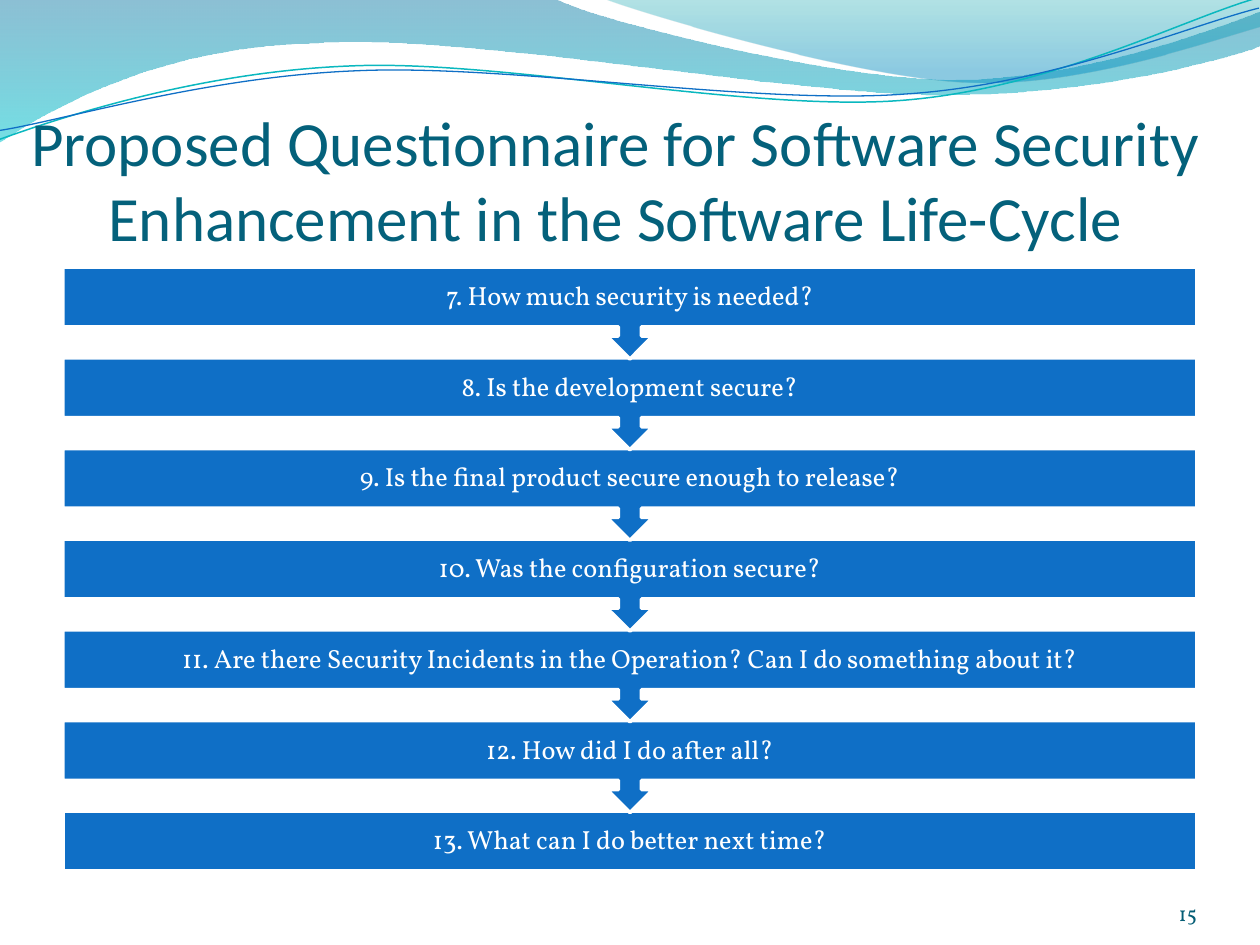
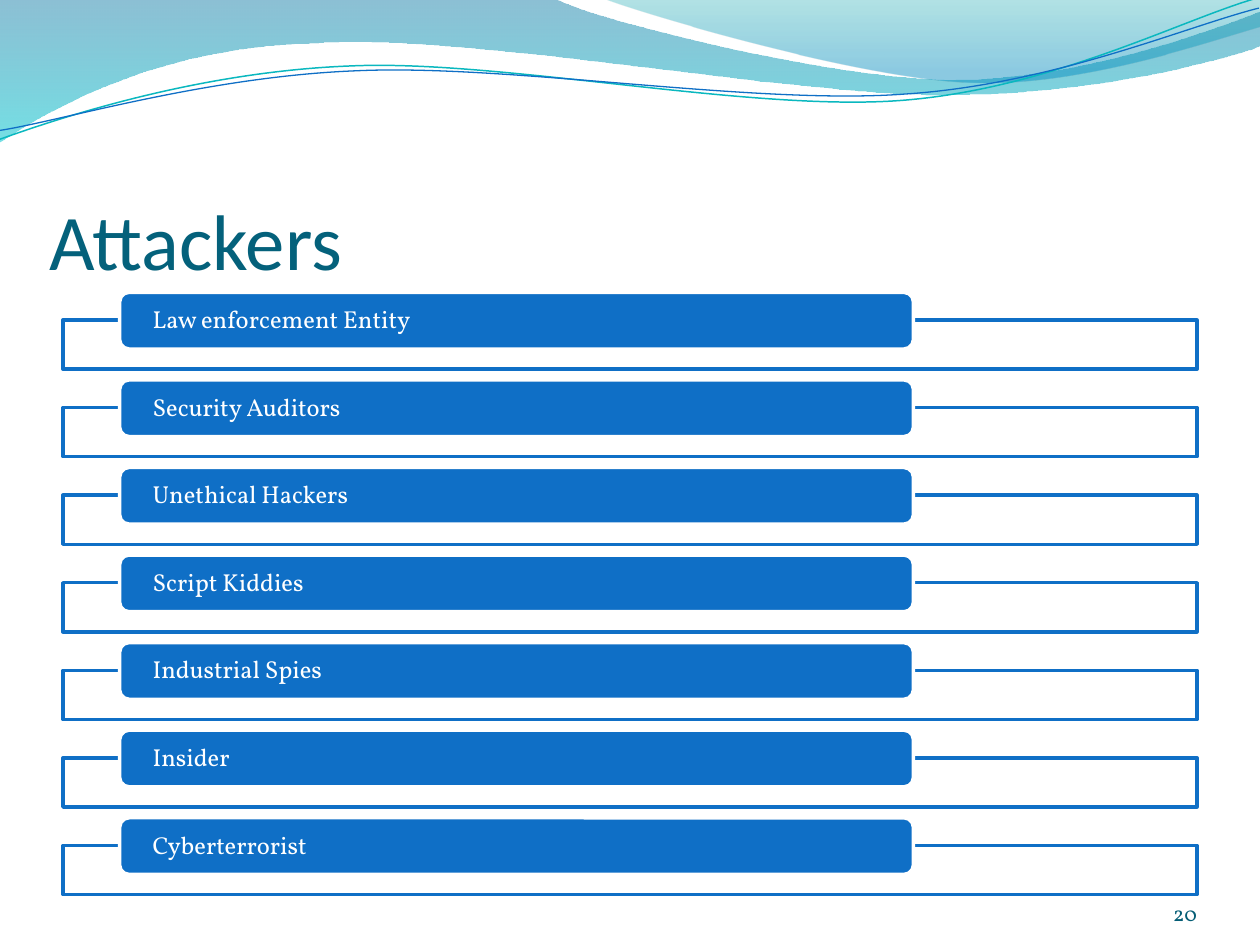
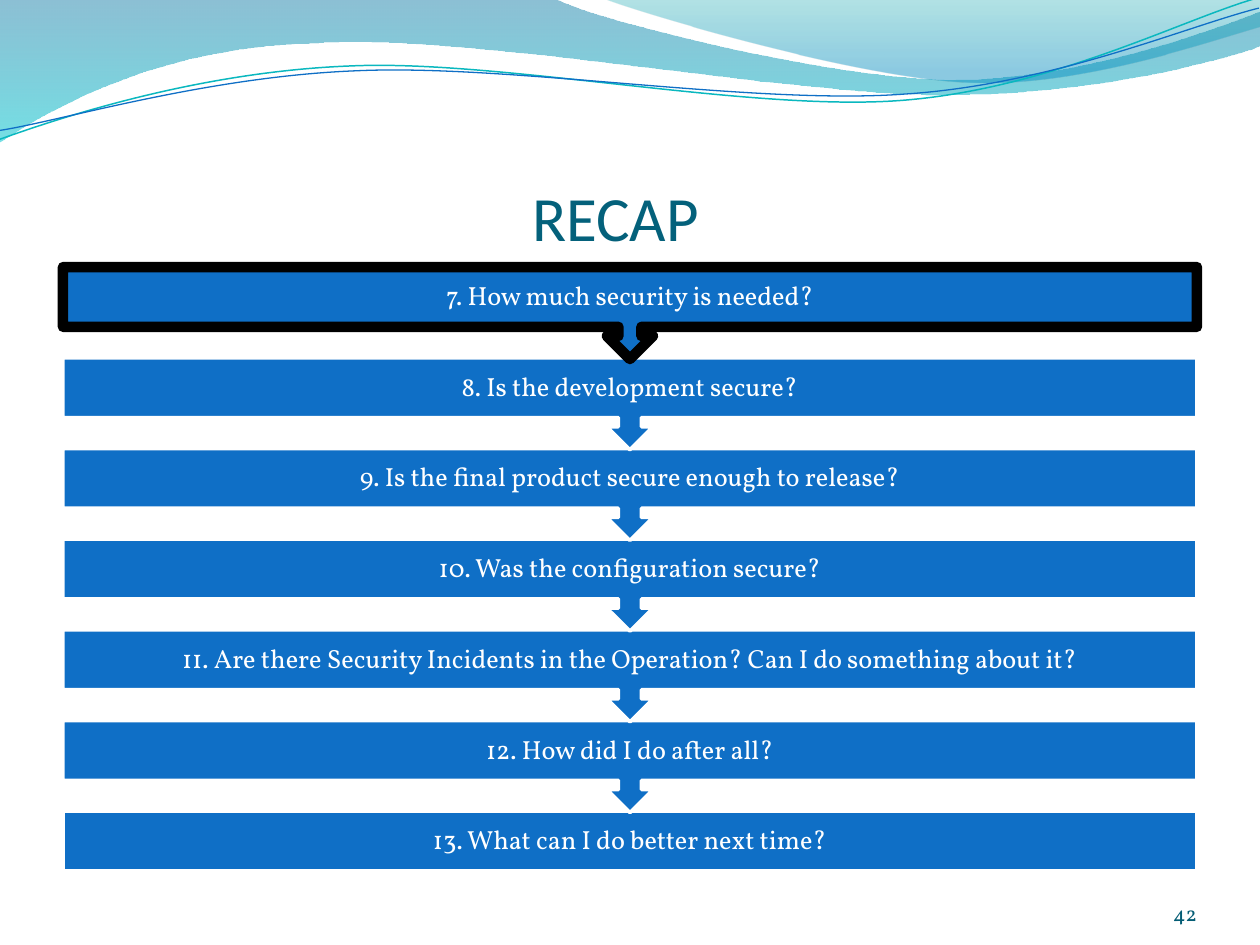
from dataclasses import dataclass

from lxml import etree
from pptx import Presentation
from pptx.dml.color import RGBColor
from pptx.enum.shapes import MSO_SHAPE
from pptx.enum.text import MSO_ANCHOR, MSO_AUTO_SIZE, PP_ALIGN
from pptx.oxml.ns import qn
from pptx.util import Inches, Pt

RECTANGLE = MSO_SHAPE.RECTANGLE
ROUNDED = MSO_SHAPE.ROUNDED_RECTANGLE
ARROW_BOX = MSO_SHAPE.DOWN_ARROW_CALLOUT
LEFT, CENTER, RIGHT = PP_ALIGN.LEFT, PP_ALIGN.CENTER, PP_ALIGN.RIGHT
MIDDLE, BOTTOM = MSO_ANCHOR.MIDDLE, MSO_ANCHOR.BOTTOM
NO_AUTOFIT = MSO_AUTO_SIZE.NONE


@dataclass(frozen=True)
class Theme:
    blue: RGBColor = RGBColor.from_string("0F6FC6")
    white: RGBColor = RGBColor.from_string("FFFFFF")
    black: RGBColor = RGBColor.from_string("000000")
    teal: RGBColor = RGBColor.from_string("0AB8BF")
    title: RGBColor = RGBColor.from_string("04617B")
    number: RGBColor = RGBColor.from_string("045D75")
    heading_font: str = "Calibri"
    body_font: str = "Vollkorn"
    title_size: int = 36
    large_title_size: int = 45
    step_size: int = 15
    label_size: int = 14
    number_size: int = 12
    border: int = 2
    highlight_border: int = 6


THEME = Theme()

# Wave outlines: one point is a straight line, three points are a Bezier curve
WAVE_BANDS = [
    ([[(0, 0)], [(4.4, -0.01)],
      [(4.76, 0.17), (6.64, 0.63), (7.58, 0.63)],
      [(8.53, 0.63), (9.58, 0.26), (10, 0.09)], [(10.01, 0.36)],
      [(9.83, 0.44), (8.7, 0.76), (7.46, 0.75)],
      [(6.22, 0.75), (3.82, 0.28), (2.57, 0.34)],
      [(1.29, 0.36), (0.46, 0.83), (-0.01, 1.13)]],
     [(0, "0074A1", 45), (1, "00C6CF", 55)]),
    ([[(4.79, -0.01)],
      [(5.09, 0.11), (6.82, 0.62), (7.69, 0.65)],
      [(8.56, 0.69), (9.61, 0.32), (10, 0.21)], [(10, 0)]],
     [(0, "00A1A9", 30), (0.8, "008BBF", 45)]),
]
# The lines are given level and then turned
WAVE_LINES = [
    ([[(-0.02, 0.87)],
      [(0.47, 0.72), (1.58, 0.41), (2.78, 0.42)],
      [(3.96, 0.42), (5.91, 0.93), (7.12, 0.9)],
      [(8.32, 0.87), (9.4, 0.36), (10, 0.22)]], THEME.teal, 0.85),
    ([[(-0.02, 0.8)],
      [(0.46, 0.75), (1.64, 0.45), (2.83, 0.46)],
      [(4.03, 0.46), (5.96, 0.88), (7.16, 0.85)],
      [(8.35, 0.83), (9.42, 0.42), (10.01, 0.3)]], THEME.blue, 0.75),
]
WAVE_LINE_TURN = 357.3

QUESTIONS = [
    "7. How much security is needed?",
    "8. Is the development secure?",
    "9. Is the final product secure enough to release?",
    "10. Was the configuration secure?",
    "11. Are there Security Incidents in the Operation? Can I do something about it?",
    "12. How did I do after all?",
    "13. What can I do better next time?",
]
ATTACKERS = [
    "Law enforcement Entity", "Security Auditors", "Unethical Hackers",
    "Script Kiddies", "Industrial Spies", "Insider", "Cyberterrorist",
]
QUESTION_TITLE = ("Proposed Questionnaire for Software Security "
                  "Enhancement in the Software Life-Cycle")
CENTERED_TITLE = (0, 0.77, 9.77, 1.25)
LEFT_TITLE = (0.39, 1.33, 9, 0.94)
# Title, title box, alignment, title size, slide number, highlighted question
SLIDES = [
    (QUESTION_TITLE, CENTERED_TITLE, CENTER, THEME.title_size, "15", None),
    ("Attackers", LEFT_TITLE, LEFT, THEME.large_title_size, "20", None),
    ("RECAP", CENTERED_TITLE, CENTER, THEME.title_size, "42", 0),
]
QUESTION_TOP, QUESTION_PITCH = 2.12, 0.72
LABEL_TOP, FRAME_OFFSET = 2.32, 0.22
LABEL_PITCH = (6.49 - LABEL_TOP) / (len(ATTACKERS) - 1)


def write(shape, text, size, color, align, anchor, font=THEME.body_font,
          insets=(0, 0, 0, 0)):
    """Set one formatted paragraph; insets run left, top, right, bottom."""
    frame = shape.text_frame
    frame.text = text
    frame.word_wrap = True
    frame.auto_size = NO_AUTOFIT
    frame.vertical_anchor = anchor
    (frame.margin_left, frame.margin_top,
     frame.margin_right, frame.margin_bottom) = map(Inches, insets)
    para = frame.paragraphs[0]
    para.alignment = align
    span = para.runs[0]
    span.font.size = Pt(size)
    span.font.name = font
    span.font.color.rgb = color
    return para


def draw(shapes, kind, box, fill, line=None, width=THEME.border, outline=None):
    """Add a preset shape, or a freeform along the outline when kind is None."""
    if kind is None:
        points = [(Inches(x), Inches(y)) for part in outline for x, y in part]
        builder = shapes.build_freeform(*points[0])
        builder.add_line_segments(points[1:], close=line is None)
        shape = builder.convert_to_shape()
        corners = iter(list(shape.element.iter(qn("a:lnTo"))))
        for part in outline[1:]:
            nodes = [next(corners) for _ in part]
            if len(part) == 3:
                curve = etree.Element(qn("a:cubicBezTo"))
                nodes[0].addprevious(curve)
                for node in nodes:
                    curve.append(node[0])
                    node.getparent().remove(node)
    else:
        shape = shapes.add_shape(kind, *map(Inches, box))
    shape.shadow.inherit = False
    if fill is None:
        shape.fill.background()
    else:
        shape.fill.solid()
        shape.fill.fore_color.rgb = fill
    if line is None:
        shape.line.fill.background()
    else:
        shape.line.color.rgb = line
        shape.line.width = Pt(width)
    return shape


deck = Presentation()
deck.slide_width, deck.slide_height = Inches(10), Inches(7.5)
title_only = deck.slide_layouts[5]
pages = [deck.slides.add_slide(title_only) for _ in SLIDES]

# Freeforms can only be built on a page, so the waves then move to the master
waves = []
for outline, stops in WAVE_BANDS:
    band = draw(pages[0].shapes, None, None, None, outline=outline)
    band.fill.gradient()
    band.fill.gradient_angle = 270
    for stop, (position, color, _) in zip(band.fill.gradient_stops, stops):
        stop.position = position
        stop.color.rgb = RGBColor.from_string(color)
    for node, (_, _, opacity) in zip(band.element.iter(qn("a:srgbClr")), stops):
        etree.SubElement(node, qn("a:alpha"), val=str(opacity * 1000))
    waves.append(band)
for outline, color, width in WAVE_LINES:
    wave_line = draw(pages[0].shapes, None, None, None, color, width, outline)
    wave_line.rotation = WAVE_LINE_TURN
    waves.append(wave_line)
for index, wave in enumerate(waves):
    deck.slide_master.shapes.element.insert(2 + index, wave.element)

for page, (heading, box, align, size, number, _) in zip(pages, SLIDES):
    title = page.shapes.title
    title.left, title.top, title.width, title.height = map(Inches, box)
    write(title, heading, size, THEME.title, align, BOTTOM,
          THEME.heading_font, (0, 0.05, 0, 0))
    number_box = page.shapes.add_textbox(*map(Inches, (8.67, 6.95, 0.83, 0.4)))
    write(number_box, number, THEME.number_size, THEME.number, RIGHT, BOTTOM)

# Questions are stacked from the bottom up so that each arrow lies on the next box
for page, details in ((pages[0], SLIDES[0]), (pages[2], SLIDES[2])):
    highlighted = details[-1]
    for index, question in reversed(list(enumerate(QUESTIONS))):
        last = index == len(QUESTIONS) - 1
        marked = index == highlighted
        top = QUESTION_TOP + index * QUESTION_PITCH
        step_box = draw(page.shapes, RECTANGLE if last else ARROW_BOX,
                        (0.5, top, 9, 0.47 if last else 0.73), THEME.blue,
                        THEME.black if marked else THEME.white,
                        THEME.highlight_border if marked else THEME.border)
        para = write(step_box, question, THEME.step_size, THEME.white, CENTER,
                     MIDDLE, insets=(0.12, 0, 0.12, 0))
        para.line_spacing = 0.9

for index, attacker in enumerate(ATTACKERS):
    top = LABEL_TOP + index * LABEL_PITCH
    draw(pages[1].shapes, RECTANGLE, (0.5, top + FRAME_OFFSET, 9, 0.39),
         THEME.white, THEME.blue)
    label = draw(pages[1].shapes, ROUNDED, (0.95, top, 6.3, 0.45),
                 THEME.blue, THEME.white)
    para = write(label, attacker, THEME.label_size, THEME.white, LEFT, MIDDLE,
                 insets=(0.24, 0, 0.24, 0))
    para.line_spacing = 0.9

deck.save("out.pptx")
